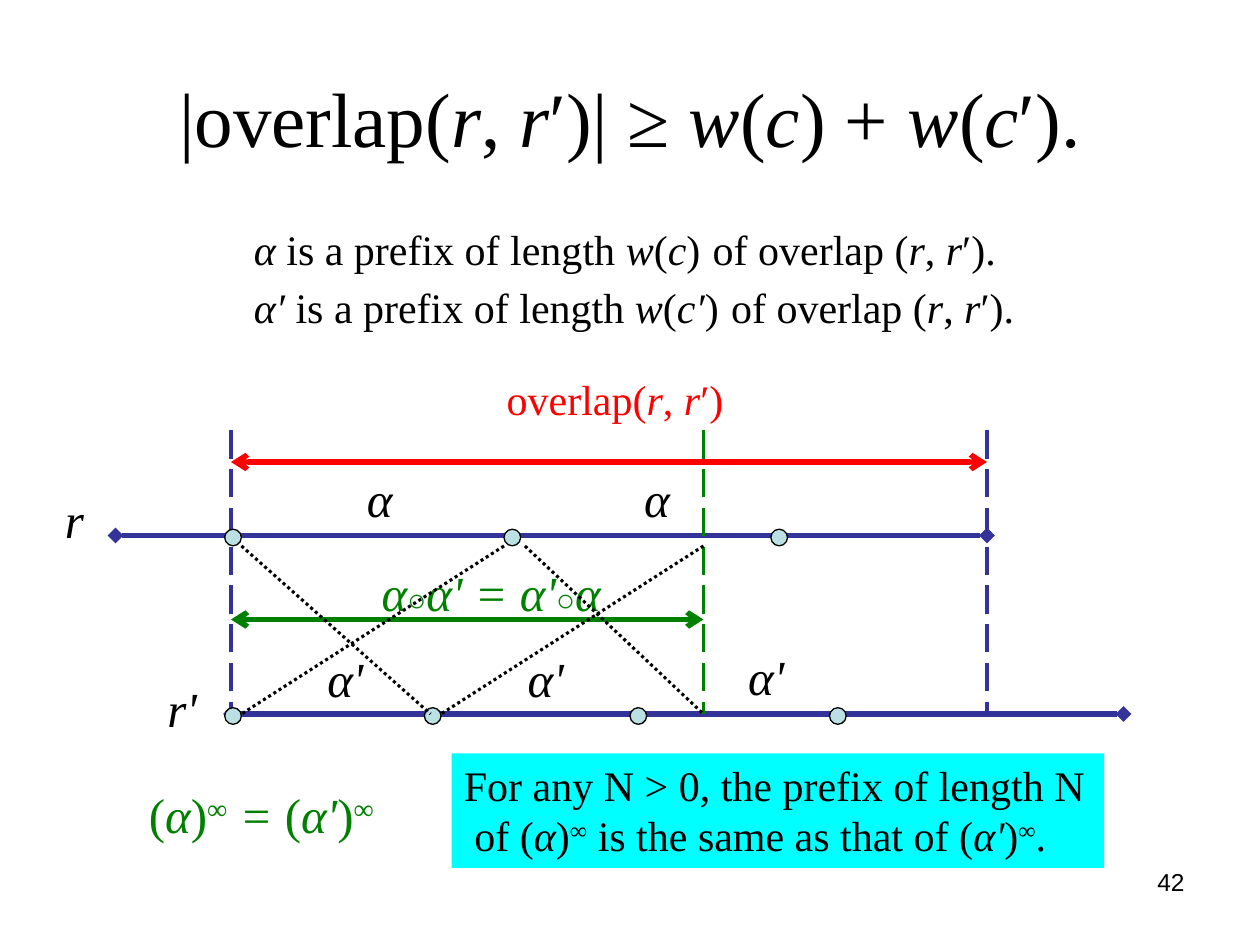
from dataclasses import dataclass
from typing import Optional

from lxml.etree import SubElement
from pptx import Presentation
from pptx.dml.color import RGBColor
from pptx.enum.dml import MSO_LINE
from pptx.enum.shapes import MSO_CONNECTOR, MSO_SHAPE
from pptx.enum.text import MSO_ANCHOR, MSO_AUTO_SIZE, PP_ALIGN
from pptx.oxml.ns import qn
from pptx.util import Pt

BLACK = RGBColor(0x00, 0x00, 0x00)
INDIGO = RGBColor(0x33, 0x33, 0x99)
RED = RGBColor(0xFF, 0x00, 0x00)
GREEN = RGBColor(0x00, 0x80, 0x00)
PALE_BLUE = RGBColor(0xBB, 0xE0, 0xE3)
CYAN = RGBColor(0x00, 0xFF, 0xFF)

SERIF = "Times New Roman"
MARKS = {
    "*": {"italic": True},
    "~": {"size": Pt(18), "bold": True},
    "_": {"size": Pt(28), "italic": True},
    "^": {},
}

OVERLAP_START, PREFIX_END, OVERLAP_END = 132, 402, 564
R_Y, R_PRIME_Y = 306, 408
GUIDE_TOP = 246
NODE_SIZE = 9.5


@dataclass
class Stroke:
    x1: float
    y1: float
    x2: float
    y2: float
    color: RGBColor
    width: float
    dash: Optional[MSO_LINE] = None
    ends: Optional[str] = None


@dataclass
class Label:
    left: float
    top: float
    width: float
    height: float
    lines: tuple[str, ...]
    size: float = 28
    color: RGBColor = BLACK
    font: str = SERIF
    align: PP_ALIGN = PP_ALIGN.LEFT


def set_all(target, values: dict) -> None:
    for key, value in values.items():
        setattr(target, key, value)


def split_marks(line: str) -> list[tuple[str, str]]:
    pieces, active, words = [], "", ""
    for char in line:
        if char in MARKS:
            if words:
                pieces.append((words, active))
            words, active = "", "" if active == char else char
        else:
            words += char
    return pieces + [(words, active)] if words else pieces


def write_lines(frame, label: Label) -> None:
    for index, line in enumerate(label.lines):
        paragraph = frame.paragraphs[0] if index == 0 else frame.add_paragraph()
        paragraph.alignment = label.align
        for words, mark in split_marks(line):
            run = paragraph.add_run()
            run.text = words
            base = {"name": label.font, "size": Pt(label.size), "bold": False, "italic": False}
            set_all(run.font, base | MARKS.get(mark, {}))
            run.font.color.rgb = label.color
            if mark == "^":
                run.font._element.set("baseline", "30000")


def place(shape, label: Label) -> None:
    set_all(shape, {
        "left": Pt(label.left), "top": Pt(label.top),
        "width": Pt(label.width), "height": Pt(label.height),
    })


def draw_label(shapes, label: Label, fill: Optional[RGBColor] = None) -> None:
    box = shapes.add_textbox(0, 0, 0, 0)
    set_all(box.text_frame, {"word_wrap": False, "auto_size": MSO_AUTO_SIZE.SHAPE_TO_FIT_TEXT})
    write_lines(box.text_frame, label)
    place(box, label)
    if fill is not None:
        box.fill.solid()
        box.fill.fore_color.rgb = fill


def draw_stroke(shapes, stroke: Stroke) -> None:
    ends = (Pt(value) for value in (stroke.x1, stroke.y1, stroke.x2, stroke.y2))
    connector = shapes.add_connector(MSO_CONNECTOR.STRAIGHT, *ends)
    connector.line.color.rgb = stroke.color
    set_all(connector.line, {"width": Pt(stroke.width), "dash_style": stroke.dash})
    properties = connector._element.spPr
    if stroke.ends:
        for tag in ("a:headEnd", "a:tailEnd"):
            SubElement(properties.find(qn("a:ln")), qn(tag)).set("type", stroke.ends)
    SubElement(properties, qn("a:effectLst"))


def draw_node(shapes, left: float, line_y: float) -> None:
    node = shapes.add_shape(
        MSO_SHAPE.OVAL, Pt(left), Pt(line_y - 3.6), Pt(NODE_SIZE), Pt(NODE_SIZE))
    node.shadow.inherit = False
    node.fill.solid()
    node.fill.fore_color.rgb = PALE_BLUE
    node.line.color.rgb = BLACK
    node.line.width = Pt(0.75)


STROKES = [
    Stroke(66, R_Y, OVERLAP_END, R_Y, INDIGO, 3, ends="diamond"),
    Stroke(OVERLAP_START, R_PRIME_Y, 642, R_PRIME_Y, INDIGO, 3, ends="diamond"),
    *(Stroke(x, GUIDE_TOP, x, R_PRIME_Y, color, 2, MSO_LINE.LONG_DASH)
      for x, color in ((OVERLAP_START, INDIGO), (OVERLAP_END, INDIGO), (PREFIX_END, GREEN))),
    Stroke(OVERLAP_START, 264, OVERLAP_END, 264, RED, 3, ends="arrow"),
    Stroke(OVERLAP_START, 354, PREFIX_END, 354, GREEN, 3, ends="arrow"),
]
CROSSINGS = [
    Stroke(upper, 312, lower, R_PRIME_Y, BLACK, 1.75, MSO_LINE.ROUND_DOT)
    for upper, lower in ((138, 246), (300, PREFIX_END), (288, 138), (PREFIX_END, 252))
]
NODES = {R_Y: (128.4, 288, 440.5), R_PRIME_Y: (128.4, 242.5, 360, 474)}

TITLE = Label(36, 21.6, 648, 90, ("|overlap(*r*, *r*′)| ≥ *w*(*c*) + *w*(*c*′).",),
              size=44, align=PP_ALIGN.CENTER)
LABELS = [
    Label(516, 492, 168, 37.5, ("42",), 14, font="Arial", align=PP_ALIGN.RIGHT),
    Label(30, 276, 25, 41, ("*r*",)),
    Label(88.5, 384, 32, 41, ("*r'*",)),
    Label(282.5, 210, 141, 36, ("overlap(*r*, *r*′)",), 24, RED),
    *(Label(left, 264, 29.5, 41, ("*α*",)) for left in (202.5, 361)),
    *(Label(left, top, 35.5, 41, ("*α'*",))
      for left, top in ((180, 367), (294.5, 367), (420.5, 366))),
    Label(211, 318, 140.5, 41, ("*α*~○~*α' = α'*~○~*α*",), color=GREEN),
    Label(138, 120, 459.5, 75, (
        "*α *is a prefix of length *w*(*c*)_ _of overlap (*r*, *r*′).",
        "*α′ *is a prefix of length *w*(*c′*)_ _of overlap (*r*, *r*′).",
    ), 24),
    Label(78, 445, 147.5, 41, ("(*α*)^∞^* = *(*α'*)^∞^",), color=GREEN),
]
CONCLUSION = Label(258, 430.5, 373, 65.5, (
    "For any N > 0, the prefix of length N",
    " of (*α*)^∞^ is the same as that of (*α'*)^∞^.",
), 24)


def main() -> None:
    deck = Presentation()
    set_all(deck, {"slide_width": Pt(720), "slide_height": Pt(540)})
    slide = deck.slides.add_slide(deck.slide_layouts[5])
    shapes = slide.shapes
    heading = shapes.title
    place(heading, TITLE)
    set_all(heading.text_frame, {
        "vertical_anchor": MSO_ANCHOR.MIDDLE, "auto_size": MSO_AUTO_SIZE.NONE, "word_wrap": True,
    })
    write_lines(heading.text_frame, TITLE)
    for stroke in STROKES:
        draw_stroke(shapes, stroke)
    for line_y, lefts in NODES.items():
        for left in lefts:
            draw_node(shapes, left, line_y)
    for label in LABELS:
        draw_label(shapes, label)
    for crossing in CROSSINGS:
        draw_stroke(shapes, crossing)
    draw_label(shapes, CONCLUSION, CYAN)
    deck.save("out.pptx")


if __name__ == "__main__":
    main()
